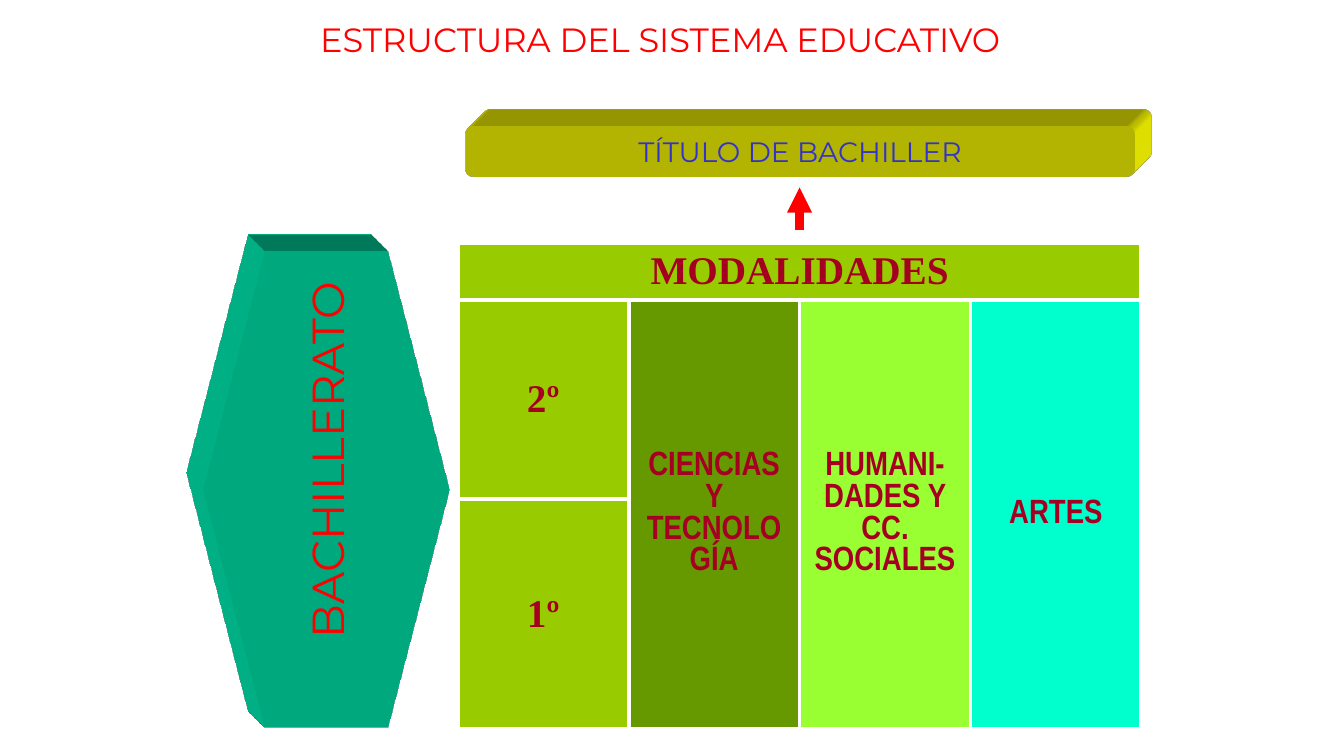
from dataclasses import dataclass
from typing import Optional

from lxml import etree
from pptx import Presentation
from pptx import util as u
from pptx.dml.color import RGBColor
from pptx.enum import shapes, text
from pptx.oxml import ns, parse_xml

EMU_PER_PX = 9144
COLORS = {
    "red": "FF0000", "crimson": "A50021", "blue": "3333CC", "white": "FFFFFF",
    "teal": "00CC99", "yellow": "FFFF00", "olive": "99CC00",
    "moss": "669900", "lime": "99FF33", "aqua": "00FFCC",
}
COLUMN_COUNT = 4
ROW_HEIGHTS = (57, 197, 228)


@dataclass
class Style:
    font: str
    size: int
    color: str
    bold: bool = False


@dataclass
class Block:
    kind: int
    box: tuple[int, int, int, int]
    fill: str
    adjustment: float
    camera: str
    label: str
    style: Style
    rotation: int = 0
    direction: Optional[str] = None


@dataclass
class Field:
    row: int
    column: int
    label: str
    fill: str
    style: Style
    last_row: int
    last_column: int


SERIF = Style("Times New Roman", 28, "crimson", True)
NARROW = Style("Arial Narrow", 24, "crimson", True)

BLOCKS = [
    Block(shapes.MSO_SHAPE.HEXAGON, (202, 249, 244, 473), "teal", 0.25,
          "legacyObliqueTopLeft", "BACHILLERATO",
          Style("Montserrat", 32, "red"), 180, "eaVert"),
    Block(shapes.MSO_SHAPE.ROUNDED_RECTANGLE, (462, 125, 663, 50), "yellow", 0.167,
          "legacyObliqueTopRight", "TÍTULO DE BACHILLER",
          Style("Montserrat", 20, "blue")),
]
FIELDS = [
    Field(0, 0, "MODALIDADES", "olive", SERIF, 0, 3),
    Field(1, 0, "2º", "olive", SERIF, 1, 0),
    Field(2, 0, "1º", "olive", SERIF, 2, 0),
    Field(1, 1, "CIENCIAS Y TECNOLOGÍA", "moss", NARROW, 2, 1),
    Field(1, 2, "HUMANI-DADES Y CC. SOCIALES", "lime", NARROW, 2, 2),
    Field(1, 3, "ARTES", "aqua", NARROW, 2, 3),
]


def px(length: int) -> u.Emu:
    return u.Emu(length * EMU_PER_PX)


def rgb(name: str) -> RGBColor:
    return RGBColor.from_string(COLORS[name])


def write(frame, label: str, style: Style):
    paragraph = frame.paragraphs[0]
    paragraph.alignment = text.PP_ALIGN.CENTER
    run = paragraph.add_run()
    run.text = label
    run.font.name = style.font
    run.font.size = u.Pt(style.size)
    run.font.bold = style.bold
    run.font.color.rgb = rgb(style.color)
    return paragraph


def extrude(properties, camera: str, color: str) -> None:
    properties.append(parse_xml(
        f'<a:scene3d {ns.nsdecls("a")}><a:camera prst="{camera}"/>'
        '<a:lightRig rig="legacyFlat3" dir="b"/></a:scene3d>'))
    properties.append(parse_xml(
        f'<a:sp3d {ns.nsdecls("a")} extrusionH="430200" prstMaterial="legacyMatte">'
        '<a:bevelT w="13500" h="13500" prst="angle"/>'
        '<a:bevelB w="13500" h="13500" prst="angle"/>'
        f'<a:extrusionClr><a:srgbClr val="{COLORS[color]}"/></a:extrusionClr></a:sp3d>'))


def draw_block(slide, block: Block) -> None:
    solid = slide.shapes.add_shape(block.kind, *map(px, block.box))
    solid.adjustments[0] = block.adjustment
    solid.rotation = block.rotation
    solid.shadow.inherit = False
    solid.fill.solid()
    solid.fill.fore_color.rgb = rgb(block.fill)
    solid.line.fill.background()
    extrude(solid.element.spPr, block.camera, block.fill)
    frame = solid.text_frame
    frame.word_wrap = False
    frame.vertical_anchor = text.MSO_ANCHOR.MIDDLE
    if block.direction:
        frame._txBody.bodyPr.set("vert", block.direction)
    write(frame, block.label, block.style)


def add_borders(cell) -> None:
    properties = cell._tc.get_or_add_tcPr()
    for side in ("lnL", "lnR", "lnT", "lnB"):
        border = etree.SubElement(properties, ns.qn(f"a:{side}"), w=str(u.Pt(3)))
        paint = etree.SubElement(border, ns.qn("a:solidFill"))
        etree.SubElement(paint, ns.qn("a:srgbClr"), val=COLORS["white"])


def draw_modalities(slide) -> None:
    grid = slide.shapes.add_table(len(ROW_HEIGHTS), COLUMN_COUNT, px(454), px(241),
                                  px(678), px(sum(ROW_HEIGHTS))).table
    grid.first_row = False
    grid.horz_banding = False
    for row, height in zip(grid.rows, ROW_HEIGHTS):
        row.height = px(height)
    for field in FIELDS:
        for row in range(field.row, field.last_row + 1):
            for column in range(field.column, field.last_column + 1):
                cell = grid.cell(row, column)
                add_borders(cell)
                cell.fill.solid()
                cell.fill.fore_color.rgb = rgb(field.fill)
        start = grid.cell(field.row, field.column)
        end = grid.cell(field.last_row, field.last_column)
        if start != end:
            start.merge(end)
        start.vertical_anchor = text.MSO_ANCHOR.MIDDLE
        paragraph = write(start.text_frame, field.label, field.style)
        spacing = etree.SubElement(paragraph._p.get_or_add_pPr(), ns.qn("a:spcBef"))
        etree.SubElement(spacing, ns.qn("a:spcPct"), val="20000")


def draw_title(slide) -> None:
    title = slide.shapes.title
    title.left, title.top, title.width, title.height = map(px, (217, 14, 875, 50))
    title.text_frame.vertical_anchor = text.MSO_ANCHOR.TOP
    title.text_frame.word_wrap = True
    title.text_frame.auto_size = text.MSO_AUTO_SIZE.NONE
    write(title.text_frame, "ESTRUCTURA DEL SISTEMA EDUCATIVO",
          Style("Montserrat", 24, "red"))


def draw_arrow(slide) -> None:
    arrow = slide.shapes.add_connector(shapes.MSO_CONNECTOR.STRAIGHT,
                                       px(793), px(228), px(793), px(186))
    arrow.line.color.rgb = rgb("red")
    arrow.line.width = u.Pt(6)
    etree.SubElement(arrow.line._get_or_add_ln(), ns.qn("a:tailEnd"), type="triangle",
                     w="med", len="med")
    etree.SubElement(arrow._element.spPr, ns.qn("a:effectLst"))


def main() -> None:
    deck = Presentation()
    deck.slide_width, deck.slide_height = px(1333), px(750)
    slide = deck.slides.add_slide(deck.slide_layouts[5])
    hexagon, degree = BLOCKS
    draw_title(slide)
    draw_block(slide, hexagon)
    draw_modalities(slide)
    draw_block(slide, degree)
    draw_arrow(slide)
    deck.save("out.pptx")


if __name__ == "__main__":
    main()
